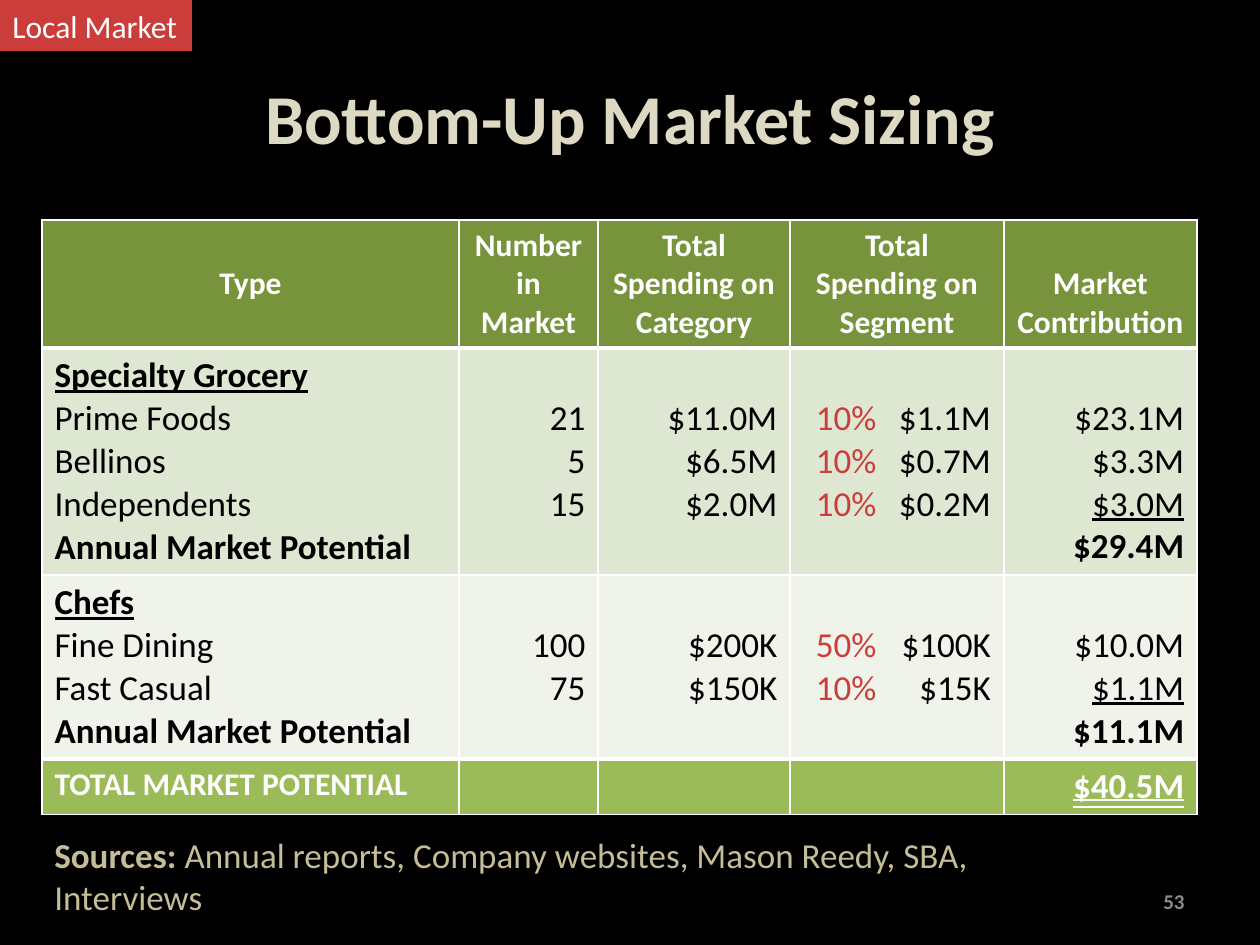
from dataclasses import dataclass

from lxml import etree
from pptx import Presentation
from pptx import util as u
from pptx.dml.color import RGBColor
from pptx.enum import shapes, text
from pptx.oxml import ns

TITLE = "Bottom-Up Market Sizing"
TAG = "Local Market"
PAGE = "53"
SOURCES = ("Sources: ", "Annual reports, Company websites, Mason Reedy, SBA, Interviews")

HEADERS = ["Type", "Number in Market", "Total Spending on Category",
           "Total Spending on Segment", "Market Contribution"]
# name, number, category spending, segment share, segment spending, contribution
GROUPS = [
    ("Specialty Grocery", [
        ("Prime Foods", "21", "$11.0M", "10%", "$1.1M", "$23.1M"),
        ("Bellinos", "5", "$6.5M", "10%", "$0.7M", "$3.3M"),
        ("Independents", "15", "$2.0M", "10%", "$0.2M", "$3.0M"),
    ], "$29.4M"),
    ("Chefs", [
        ("Fine Dining", "100", "$200K", "50%", "$100K", "$10.0M"),
        ("Fast Casual", "75", "$150K", "10%", "$15K", "$1.1M"),
    ], "$11.1M"),
]
SUBTOTAL = "Annual Market Potential"
TOTAL = ("TOTAL MARKET POTENTIAL", "$40.5M")

COLUMNS = [417, 139, 192, 214, 193]
ROWS = [128, 227, 184, 55]
TABLE_LEFT, TABLE_TOP = 42, 220
LINE_HEIGHT, PAD_TOP = 43, 6
SHARE_INDENT, SPENDING_TAB = 26, 175


@dataclass(frozen=True)
class Theme:
    font: str = "Calibri"
    background: str = "000000"
    title: str = "DDD9C3"
    sources: str = "C4BD97"
    page: str = "8C8C8C"
    accent: str = "CB3D3A"
    ink: str = "000000"
    white: str = "FFFFFF"
    header: str = "77933C"
    groups: tuple = ("DEE7D1", "EFF3EA")
    total: str = "9BBB59"
    title_size: int = 40
    body_size: int = 20
    label_size: int = 18
    page_size: int = 12


THEME = Theme()
ALIGN = text.PP_ALIGN
ANCHOR = text.MSO_ANCHOR


def px(n):
    return u.Emu(round(n * 914400 / 126))


def style(font, size, color, bold=False, underline=None):
    font.name, font.size, font.bold = THEME.font, u.Pt(size), bold
    font.color.rgb = RGBColor.from_string(color)
    if underline:
        font.underline = underline


def write(frame, lines, size, color, align=ALIGN.LEFT):
    """Write (text, bold, underline) lines, one paragraph each."""
    for i, (words, bold, underline) in enumerate(lines):
        paragraph = frame.add_paragraph() if i else frame.paragraphs[0]
        paragraph.alignment = align
        paragraph.add_run().text = words
        style(paragraph.font, size, color, bold, underline)


def write_segment(cell, members):
    """Share at the left, spending against a right tab stop."""
    cell.margin_left, cell.margin_right = px(SHARE_INDENT), 0
    for i, member in enumerate(members):
        frame = cell.text_frame
        paragraph = frame.add_paragraph() if i else frame.paragraphs[0]
        paragraph.alignment = ALIGN.LEFT
        share, spending = paragraph.add_run(), paragraph.add_run()
        share.text, spending.text = member[3], "\t" + member[4]
        style(paragraph.font, THEME.body_size, THEME.ink)
        share.font.color.rgb = RGBColor.from_string(THEME.accent)
        properties = paragraph.font._element.getparent()
        tabs = etree.Element(ns.qn("a:tabLst"))
        etree.SubElement(tabs, ns.qn("a:tab"), pos=str(px(SPENDING_TAB)), algn="r")
        properties.insert(0, tabs)


def paint(cell, fill, top=1, bottom=1):
    properties = cell._tc.get_or_add_tcPr()
    for side, width in (("L", 1), ("R", 1), ("T", top), ("B", bottom)):
        line = etree.SubElement(properties, ns.qn(f"a:ln{side}"), w=str(u.Pt(width)))
        solid = etree.SubElement(line, ns.qn("a:solidFill"))
        etree.SubElement(solid, ns.qn("a:srgbClr"), val=THEME.white)
    cell.fill.solid()
    cell.fill.fore_color.rgb = RGBColor.from_string(fill)


def fill_group(cells, group):
    name, members, subtotal = group
    last = len(members) - 1
    names = [(name, True, True)] + [(m[0], False, None) for m in members]
    write(cells[0].text_frame, names + [(SUBTOTAL, True, None)], THEME.body_size, THEME.ink)
    for cell in cells[1:]:
        cell.margin_top = px(PAD_TOP + LINE_HEIGHT)
    for column in (1, 2):
        write(cells[column].text_frame, [(m[column], False, None) for m in members],
              THEME.body_size, THEME.ink, ALIGN.RIGHT)
    write_segment(cells[3], members)
    amounts = [(m[5], False, i == last) for i, m in enumerate(members)]
    write(cells[4].text_frame, amounts + [(subtotal, True, None)],
          THEME.body_size, THEME.ink, ALIGN.RIGHT)


def add_market_table(slide):
    table = slide.shapes.add_table(len(ROWS), len(COLUMNS), px(TABLE_LEFT), px(TABLE_TOP),
                                   px(sum(COLUMNS)), px(sum(ROWS))).table
    for column, width in zip(table.columns, COLUMNS):
        column.width = px(width)
    for row, height in zip(table.rows, ROWS):
        row.height = px(height)
    header, *groups, total = [list(row.cells) for row in table.rows]

    for cell, label in zip(header, HEADERS):
        paint(cell, THEME.header, bottom=3)
        cell.vertical_anchor = ANCHOR.MIDDLE
        write(cell.text_frame, [(label, True, None)], THEME.label_size, THEME.white, ALIGN.CENTER)
    header[-1].vertical_anchor = ANCHOR.BOTTOM

    for i, (cells, group) in enumerate(zip(groups, GROUPS)):
        for cell in cells:
            paint(cell, THEME.groups[i], top=1 if i else 3,
                  bottom=3 if i == len(GROUPS) - 1 else 1)
        fill_group(cells, group)

    for cell in total:
        paint(cell, THEME.total, top=3)
    write(total[0].text_frame, [(TOTAL[0], True, None)], THEME.label_size, THEME.white)
    write(total[-1].text_frame, [(TOTAL[1], True, text.MSO_UNDERLINE.DOUBLE_LINE)],
          THEME.body_size, THEME.white, ALIGN.RIGHT)


def main():
    deck = Presentation()
    deck.slide_width, deck.slide_height = px(1260), px(945)
    slide = deck.slides.add_slide(deck.slide_layouts[5])
    slide.background.fill.solid()
    slide.background.fill.fore_color.rgb = RGBColor.from_string(THEME.background)

    title = slide.shapes.title
    title.left, title.top, title.width, title.height = map(px, (63, 38, 1134, 157))
    title.text_frame.vertical_anchor = ANCHOR.MIDDLE
    write(title.text_frame, [(TITLE, True, None)], THEME.title_size, THEME.title, ALIGN.CENTER)

    add_market_table(slide)

    sources = slide.shapes.add_textbox(*map(px, (42, 827, 1072, 55))).text_frame
    write(sources, [(SOURCES[0], False, None)], THEME.body_size, THEME.sources)
    sources.paragraphs[0].runs[0].font.bold = True
    sources.paragraphs[0].add_run().text = SOURCES[1]

    page = slide.shapes.add_textbox(*map(px, (903, 876, 294, 50))).text_frame
    page.word_wrap, page.vertical_anchor = True, ANCHOR.MIDDLE
    write(page, [(PAGE, True, None)], THEME.page_size, THEME.page, ALIGN.RIGHT)

    tag = slide.shapes.add_shape(shapes.MSO_SHAPE.RECTANGLE, *map(px, (0, 0, 192, 51)))
    tag.shadow.inherit = False
    tag.fill.solid()
    tag.fill.fore_color.rgb = RGBColor.from_string(THEME.accent)
    tag.line.fill.background()
    tag.text_frame.word_wrap = False
    write(tag.text_frame, [(TAG, False, None)], THEME.label_size, THEME.white)

    deck.save("out.pptx")


if __name__ == "__main__":
    main()
